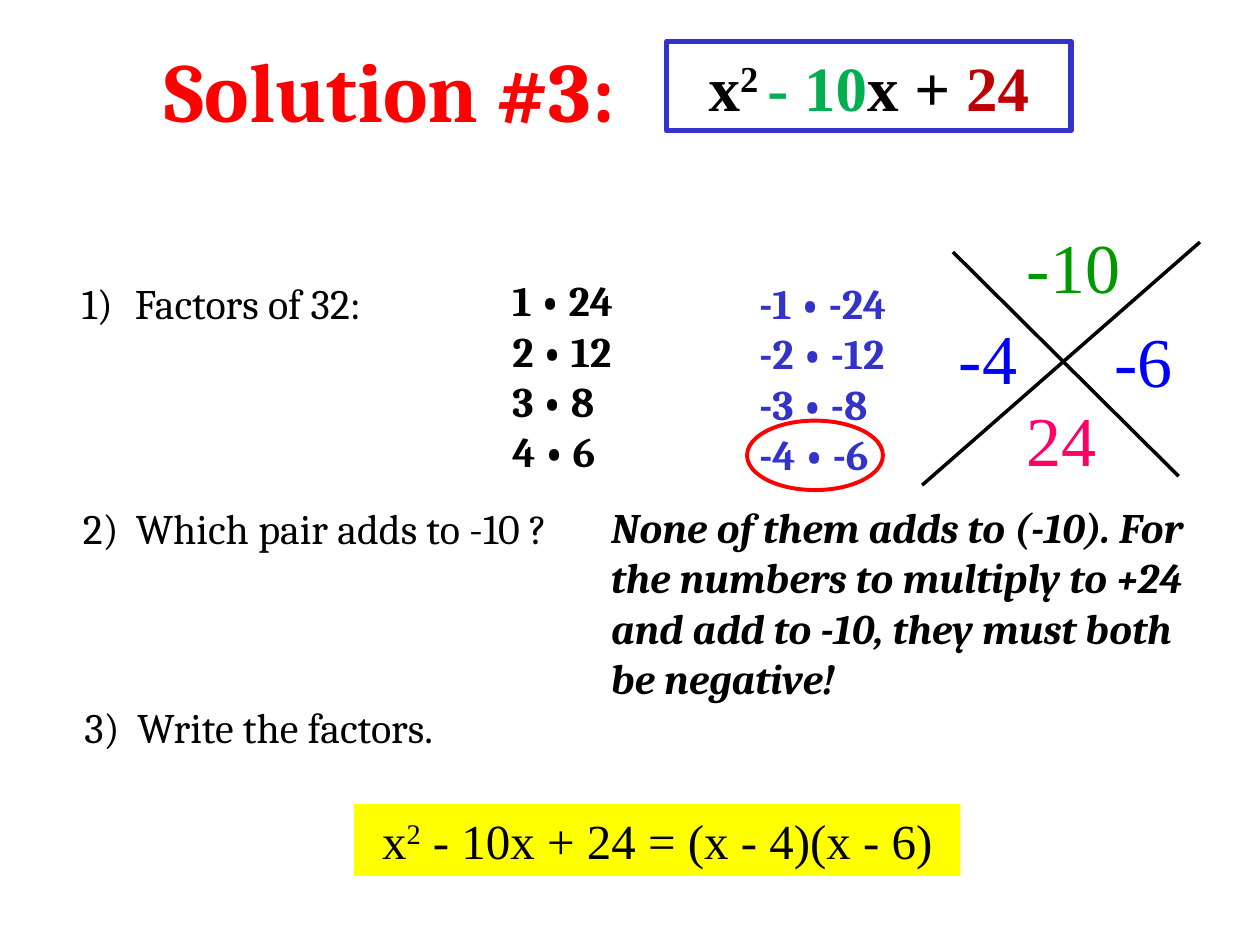
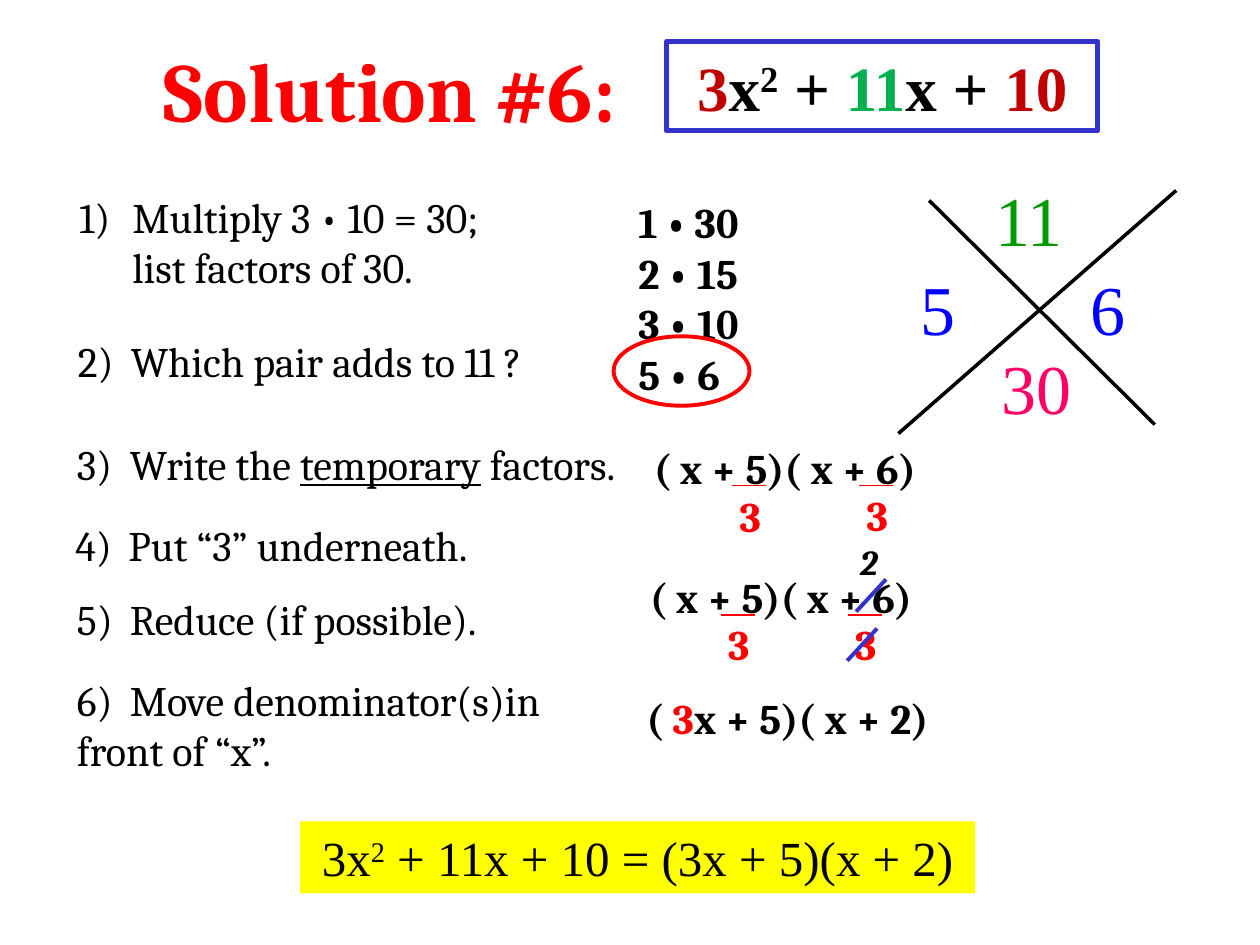
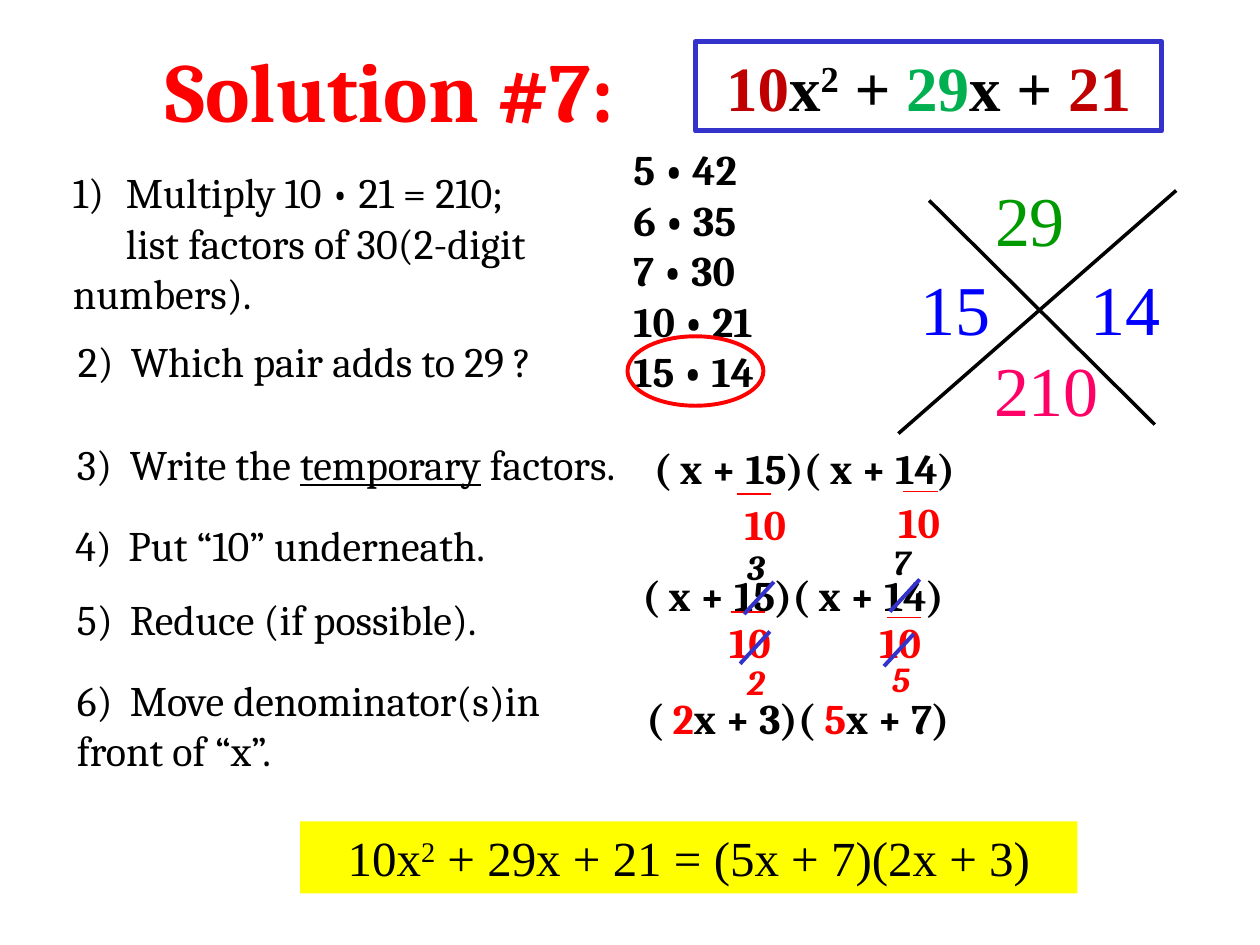
"""Build three worked solutions that factor quadratic trinomials."""
import pptx
import pptx.dml.color
import pptx.enum.shapes
import pptx.enum.text
import pptx.oxml.ns
import pptx.util
from lxml import etree

Cm = pptx.util.Cm
Pt = pptx.util.Pt
Color = pptx.dml.color.RGBColor.from_string
Shape = pptx.enum.shapes.MSO_SHAPE
Align = pptx.enum.text.PP_ALIGN

theme = {
    "black": Color("000000"), "red": Color("FF0000"), "blue": Color("3333CC"),
    "yellow": Color("FFFF00"), "dark red": Color("C00000"), "green": Color("00B050"),
    "sum": Color("009A00"), "pair": Color("0000FF"), "product": Color("FF0066"),
    "title": {"name": "Cambria", "size": Pt(48), "bold": True, "color": "red"},
    "equation": {"name": "Times New Roman", "size": Pt(36), "bold": True},
    "answer": {"name": "Times New Roman", "size": Pt(28)},
    "cross": {"name": "Times New Roman", "size": Pt(40)},
    "step": {"name": "Cambria", "size": Pt(24)},
    "work": {"name": "Cambria", "size": Pt(24), "bold": True},
    "remark": {"name": "Cambria", "size": Pt(24), "bold": True, "italic": True},
    "reduced": {"name": "Cambria", "size": Pt(20), "bold": True, "italic": True},
}
raised = {"baseline": "30000"}
outer = {"color": "dark red"}
middle = {"color": "green"}
red = {"color": "red"}
tab_stop = Cm(1.07)


def write_text(slide, box, content, style, color="black", shape=None, align=Align.LEFT):
    """Place text, given as a string or as (text, changes) runs, in a box."""
    shape = shape or slide.shapes.add_textbox(0, 0, 0, 0)
    for name, value in zip(("left", "top", "width", "height"), box):
        setattr(shape, name, Cm(value))
    frame = shape.text_frame
    frame_format = {
        "word_wrap": True,
        "auto_size": pptx.enum.text.MSO_AUTO_SIZE.NONE,
        "vertical_anchor": pptx.enum.text.MSO_ANCHOR.TOP,
        "margin_left": Cm(0.25), "margin_right": Cm(0.25),
        "margin_top": Cm(0.13), "margin_bottom": Cm(0.13),
    }
    for name, value in frame_format.items():
        setattr(frame, name, value)
    if isinstance(content, str):
        paragraphs = [[(line, {})] for line in content.split("\n")]
    else:
        paragraphs = [content]
    for number, pieces in enumerate(paragraphs):
        paragraph = frame.add_paragraph() if number else frame.paragraphs[0]
        paragraph.alignment = align
        if any("\t" in text for text, changes in pieces):
            properties = paragraph._p.get_or_add_pPr()
            tabs = etree.SubElement(properties, pptx.oxml.ns.qn("a:tabLst"))
            etree.SubElement(tabs, pptx.oxml.ns.qn("a:tab"), pos=str(tab_stop), algn="l")
        for text, changes in pieces:
            run = paragraph.add_run()
            run.text = text
            for name, value in {"color": color, **theme[style], **changes}.items():
                if name == "color":
                    run.font.color.rgb = theme[value]
                elif name == "baseline":
                    run.font._element.set("baseline", value)
                else:
                    setattr(run.font, name, value)


def draw_line(slide, left, top, across, down, color, width):
    """Draw a straight line from a point by a horizontal and vertical distance."""
    line = slide.shapes.add_connector(
        pptx.enum.shapes.MSO_CONNECTOR.STRAIGHT,
        Cm(left), Cm(top), Cm(left + across), Cm(top + down))
    line.line.color.rgb = theme[color]
    line.line.width = Pt(width)
    etree.SubElement(line._element.spPr, pptx.oxml.ns.qn("a:effectLst"))


problems = [
    {
        "title": "Solution #3:",
        "equation": (13.44, 8.15, [("x", {}), ("2 ", raised), ("- 10", middle),
                                   ("x + ", {}), ("24", outer)]),
        "answer": (7.14, 16.21, 12.22, [("x", {}), ("2", raised),
                                        (" - 10x + 24 = (x - 4)(x - 6)", {})]),
        "steps": [(1.4, 5.46, 1, "1)\tFactors of 32:"),
                  (1.42, 10.01, 1, "2)\tWhich pair adds to -10 ?"),
                  (1.45, 14.02, 1, "3)\tWrite the factors.")],
        "factors": [(10.08, 5.41, "black", "1 • 24\n2 • 12\n3 • 8\n4 • 6"),
                    (15.06, 5.46, "blue", "-1 • -24\n-2 • -12\n-3 • -8\n-4 • -6")],
        "ellipse": (15.06, 8.48),
        "cross": (18.59, 4.88),
        "cross numbers": [("24", 20.45, 7.87, "product"), ("-10", 20.45, 4.37, "sum"),
                          ("-4", 19.08, 6.22, "pair"), ("-6", 22.22, 6.27, "pair")],
        "remark": "None of them adds to (-10). For the numbers to multiply to +24 "
                  "and add to -10, they must both be negative!",
    },
    {
        "title": "Solution #6:",
        "equation": (13.44, 8.69, [("3", outer), ("x", {}), ("2", raised), (" + ", {}),
                                   ("11", middle), ("x + ", {}), ("10", outer)]),
        "answer": (6.05, 16.56, 13.61, [("3x", {}), ("2", raised),
                                        (" + 11x + 10 = (3x + 5)(x + 2)", {})]),
        "steps": [(1.35, 3.73, 2, "1)\tMultiply 3 • 10 = 30;\n\tlist factors of 30."),
                  (1.32, 6.63, 1, "2)\tWhich pair adds to 11 ?")],
        "factors": [(12.62, 3.84, "black", "1 • 30\n2 • 15\n3 • 10\n5 • 6")],
        "ellipse": (12.37, 6.78),
        "cross": (18.11, 3.84),
        "cross numbers": [("30", 19.94, 6.81, "product"), ("11", 19.81, 3.43, "sum"),
                          ("5", 18.31, 5.23, "pair"), ("6", 21.74, 5.23, "pair")],
        "denominator": "3",
        "expressions": [(12.93, 8.79, "( x + 5)( x + 6)"),
                        (12.85, 11.4, "( x + 5)( x + 6)"),
                        (12.78, 13.84, [("( ", {}), ("3", red), ("x + 5)( x + 2)", {})])],
        "denominators": [(14.66, 9.75), (17.22, 9.73), (14.43, 12.34), (16.99, 12.34)],
        "bars": [(14.76, 9.78), (17.32, 9.78), (14.53, 12.4), (17.09, 12.4)],
        "slashes": [(17.68, 12.67), (17.86, 11.68)],
        "reduced": [("2", 17.09, 10.77, "black")],
    },
    {
        "title": "Solution #7:",
        "equation": (14.02, 9.4, [("10", outer), ("x", {}), ("2", raised), (" + ", {}),
                                  ("29", middle), ("x + ", {}), ("21", outer)]),
        "answer": (6.05, 16.56, 15.67, [("10x", {}), ("2", raised),
                                        (" + 29x + 21 = (5x + 7)(2x + 3)", {})]),
        "steps": [(1.22, 3.23, 3, "1)\tMultiply 10 • 21 = 210;\n"
                                  "\tlist factors of 30(2-digit numbers)."),
                  (1.32, 6.63, 1, "2)\tWhich pair adds to 29 ?")],
        "factors": [(12.52, 2.77, "black", "5 • 42\n6 • 35\n7 • 30\n10 • 21\n15 • 14")],
        "ellipse": (12.65, 6.78),
        "cross": (18.11, 3.84),
        "cross numbers": [("210", 19.79, 6.86, "product"), ("29", 19.81, 3.43, "sum"),
                          ("15", 18.31, 5.23, "pair"), ("14", 21.74, 5.23, "pair")],
        "denominator": "10",
        "expressions": [(12.93, 8.79, "( x + 15)( x + 14)"),
                        (12.7, 11.35, "( x + 15)( x + 14)"),
                        (12.78, 13.84, [("( ", {}), ("2", red), ("x + 3)( ", {}),
                                        ("5", red), ("x + 7)", {})])],
        "denominators": [(14.76, 9.91), (17.86, 9.88), (14.45, 12.29), (17.48, 12.29)],
        "bars": [(14.86, 9.96), (18.21, 9.91), (14.73, 12.34), (17.88, 12.45)],
        "slashes": [(18.42, 12.78), (18.54, 11.68), (15.6, 11.73), (15.52, 12.73)],
        "reduced": [("7", 17.75, 10.77, "black"), ("3", 14.81, 10.87, "black"),
                    ("2", 14.81, 13.18, "red"), ("5", 17.73, 13.13, "red")],
    },
]

presentation = pptx.Presentation()
presentation.slide_width = Cm(25.4)
presentation.slide_height = Cm(19.05)

for problem in problems:
    slide = presentation.slides.add_slide(presentation.slide_layouts[5])
    write_text(slide, (1.75, 0.64, 12.22, 2.29), problem["title"], "title", "red",
               slide.shapes.title, Align.CENTER)

    equation = slide.shapes.add_shape(Shape.RECTANGLE, 0, 0, 0, 0)
    equation.shadow.inherit = False
    equation.fill.background()
    equation.line.color.rgb = theme["blue"]
    equation.line.width = Pt(3)
    left, width, runs = problem["equation"]
    write_text(slide, (left, 0.84, width, 1.8), runs, "equation",
               shape=equation, align=Align.CENTER)

    answer = slide.shapes.add_shape(Shape.RECTANGLE, 0, 0, 0, 0)
    answer.shadow.inherit = False
    answer.fill.solid()
    answer.fill.fore_color.rgb = theme["yellow"]
    answer.line.fill.background()
    left, top, width, runs = problem["answer"]
    write_text(slide, (left, top, width, 1.45), runs, "answer",
               shape=answer, align=Align.CENTER)

    steps = list(problem["steps"])
    if "denominator" in problem:
        steps += [
            (1.3, 8.71, 1, [("3)\tWrite the ", {}), ("temporary", {"underline": True}),
                            (" factors.", {})]),
            (1.27, 10.34, 1, f"4)\tPut “{problem['denominator']}” underneath."),
            (1.3, 11.84, 1, "5)\tReduce (if possible)."),
            (1.3, 13.46, 2, "6)\tMove denominator(s)in\nfront of “x”."),
        ]
    for left, top, lines, content in steps:
        write_text(slide, (left, top, 11.94, 0.25 + 1.02 * lines), content, "step")

    for left, top, color, content in problem["factors"]:
        height = 0.25 + 1.02 * len(content.split("\n"))
        write_text(slide, (left, top, 3.68, height), content, "work", color)
    left, top = problem["ellipse"]
    ellipse = slide.shapes.add_shape(Shape.OVAL, Cm(left), Cm(top), Cm(2.74), Cm(1.4))
    ellipse.shadow.inherit = False
    ellipse.fill.background()
    ellipse.line.color.rgb = theme["red"]
    ellipse.line.width = Pt(2.25)

    left, top = problem["cross"]
    draw_line(slide, left + 0.62, top + 0.2, 4.55, 4.52, "black", 2)
    draw_line(slide, left + 5.6, top, -5.6, 4.9, "black", 2)
    for number, left, top, color in problem["cross numbers"]:
        write_text(slide, (left, top, 3, 2), number, "cross", color)

    if "remark" in problem:
        write_text(slide, (12.07, 9.98, 12.67, 4.32), problem["remark"], "remark")
    for left, top, content in problem.get("expressions", []):
        write_text(slide, (left, top, 7.1, 1.27), content, "work")
    for left, top in problem.get("denominators", []):
        write_text(slide, (left, top, 1.6, 1.27), problem["denominator"], "work", "red")
    for left, top in problem.get("bars", []):
        draw_line(slide, left, top, 0.69, 0, "red", 0.75)
    for left, top in problem.get("slashes", []):
        draw_line(slide, left, top, -0.6, 0.65, "blue", 2.25)
    for number, left, top, color in problem.get("reduced", []):
        write_text(slide, (left, top, 1.3, 1.09), number, "reduced", color)

presentation.save("out.pptx")
